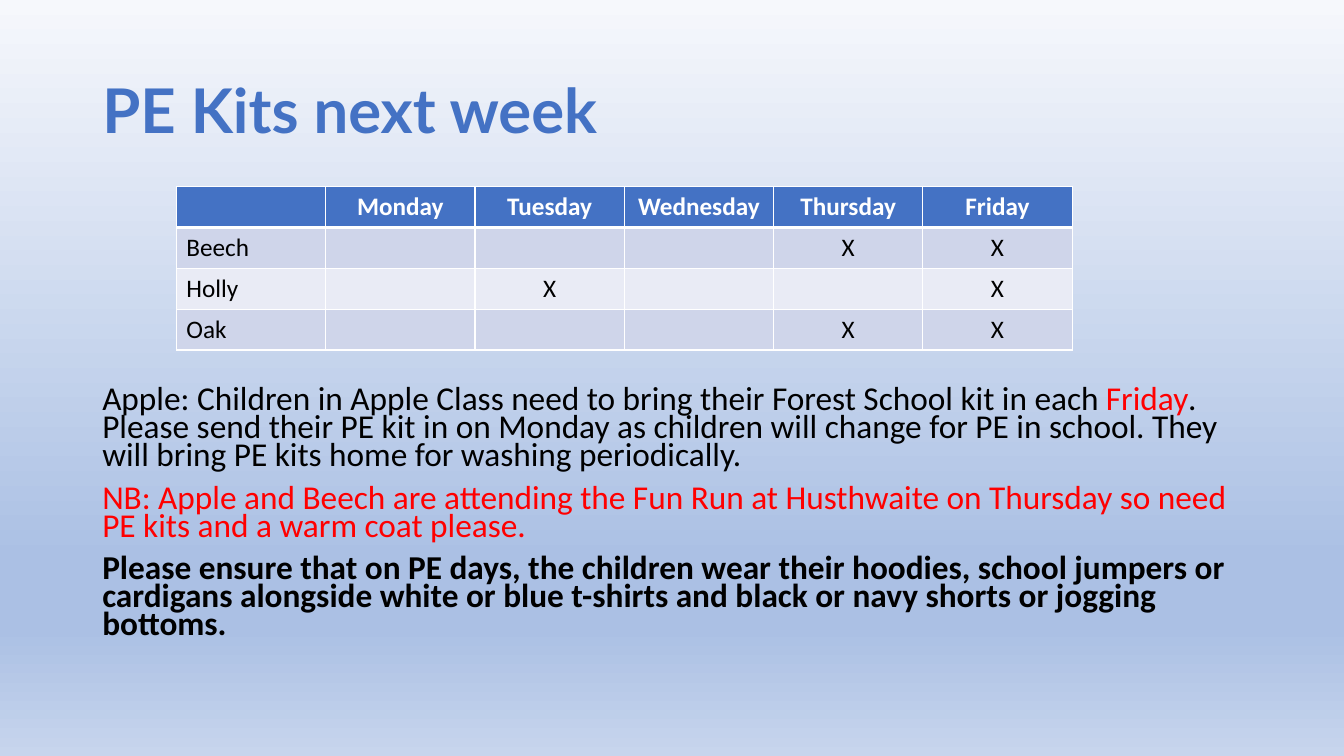
from copy import deepcopy

from lxml import etree
from pptx import Presentation
from pptx.dml.color import RGBColor
from pptx.enum.text import MSO_ANCHOR, PP_ALIGN
from pptx.oxml.ns import qn
from pptx.util import Pt

LEFT, CENTER = PP_ALIGN.LEFT, PP_ALIGN.CENTER
TOP, MIDDLE = MSO_ANCHOR.TOP, MSO_ANCHOR.MIDDLE

COLORS = {
    "blue": "4472C4",
    "white": "FFFFFF",
    "black": "000000",
    "red": "FF0000",
    "band": "CFD5EA",
    "light_band": "E9EBF5",
    "sky_top": "F6F8FC",
    "sky_deep": "ABC0E4",
    "sky_bottom": "C7D5ED",
}


def add_span(para, text, font="Calibri", size=23.8, color="black", bold=False):
    span = para.add_run()
    span.text = text
    span.font.name = font
    span.font.size = Pt(size)
    span.font.bold = bold
    span.font.color.rgb = RGBColor.from_string(COLORS[color])


def add_box(page, left, top, width, height, anchor):
    box = page.shapes.add_textbox(Pt(left), Pt(top), Pt(width), Pt(height))
    box.text_frame.word_wrap = True
    box.text_frame.vertical_anchor = anchor
    return box.text_frame


deck = Presentation()
deck.slide_width, deck.slide_height = Pt(960), Pt(540)
page = deck.slides.add_slide(deck.slide_layouts[6])

sky = page.background.fill
sky.gradient()
sky.gradient_angle = 270
stop_list = page.element.find(".//" + qn("a:gsLst"))
for stop in list(stop_list):
    stop_list.append(deepcopy(stop))
sky_stops = [(0, "sky_top"), (0.74, "sky_deep"), (0.83, "sky_deep"), (1, "sky_bottom")]
for stop, (position, color) in zip(sky.gradient_stops, sky_stops):
    stop.position = position
    stop.color.rgb = RGBColor.from_string(COLORS[color])

title = add_box(page, 66, 28.8, 828, 104.4, MIDDLE).paragraphs[0]
title.line_spacing = 0.9
add_span(title, "PE Kits next week", font="Lato", size=44, color="blue", bold=True)

days = ["Monday", "Tuesday", "Wednesday", "Thursday", "Friday"]
kit_days = {
    "Beech": ["Thursday", "Friday"],
    "Holly": ["Tuesday", "Friday"],
    "Oak": ["Thursday", "Friday"],
}
rows = [["", *days]]
for class_name, chosen in kit_days.items():
    rows.append([class_name] + ["X" if day in chosen else "" for day in days])

table = page.shapes.add_table(4, 6, Pt(126), Pt(133.2), Pt(640), Pt(116.8)).table
for column in table.columns:
    column.width = Pt(640 / 6)
for row_index, row in enumerate(rows):
    table.rows[row_index].height = Pt(29.2)
    header = row_index == 0
    fill = "blue" if header else "band" if row_index % 2 else "light_band"
    for column_index, text in enumerate(row):
        cell = table.cell(row_index, column_index)
        para = cell.text_frame.paragraphs[0]
        para.alignment = CENTER if column_index else LEFT
        if text:
            add_span(para, text, size=18, color="white" if header else "black", bold=header)
        properties = cell._tc.get_or_add_tcPr()
        for side in ("L", "R", "T", "B"):
            thick = (header and side == "B") or (row_index == 1 and side == "T")
            line = etree.SubElement(properties, qn(f"a:ln{side}"), w=str(Pt(3 if thick else 1)))
            solid = etree.SubElement(line, qn("a:solidFill"))
            etree.SubElement(solid, qn("a:srgbClr"), val=COLORS["white"])
        cell.fill.solid()
        cell.fill.fore_color.rgb = RGBColor.from_string(COLORS[fill])

notices = [
    [
        ("Apple: Children in Apple Class need to bring their Forest School kit in each ", "black", False),
        ("Friday", "red", False),
        (". Please send their PE kit in on Monday as children will change for PE in school. "
         "They will bring PE kits home for washing periodically.", "black", False),
    ],
    [("NB: Apple and Beech are attending the Fun Run at Husthwaite on Thursday "
      "so need PE kits and a warm coat please.", "red", False)],
    [("Please ensure that on PE days, the children wear their hoodies, school jumpers or "
      "cardigans alongside white or blue t-shirts and black or navy shorts or jogging bottoms.",
      "black", True)],
]
frame = add_box(page, 66, 274, 828, 212, TOP)
for index, notice in enumerate(notices):
    para = frame.add_paragraph() if index else frame.paragraphs[0]
    para.line_spacing = 0.7
    para.space_before = Pt(10 if index else 0)
    for text, color, bold in notice:
        add_span(para, text, color=color, bold=bold)

deck.save("out.pptx")
